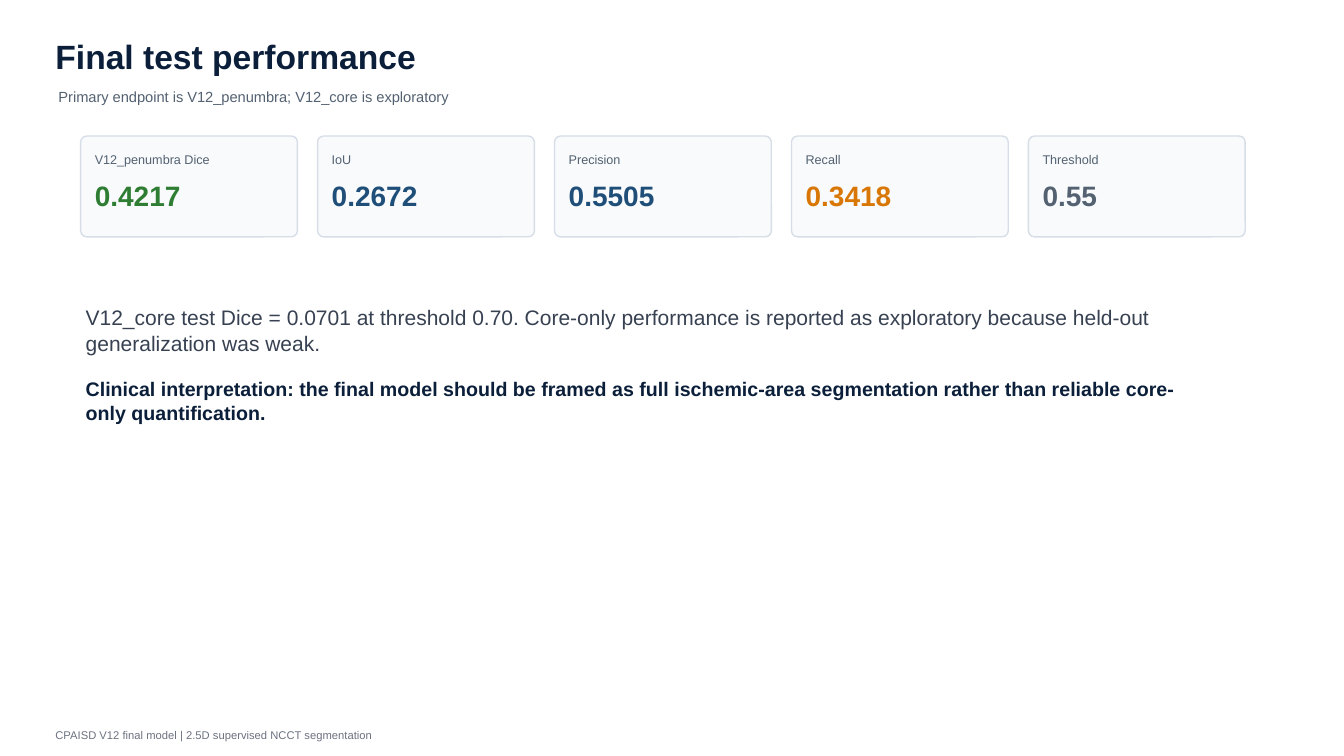
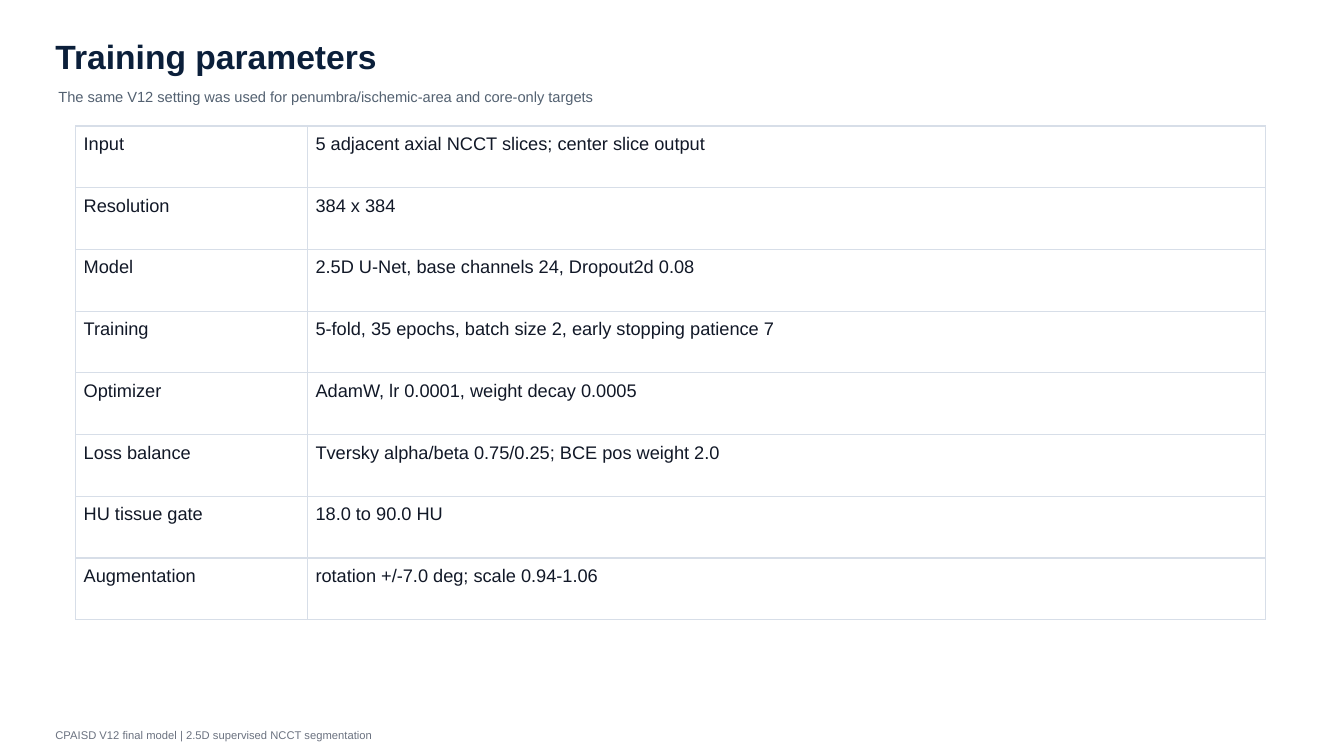
"""Build two slides: final test performance cards and a training parameter table."""
from lxml.etree import SubElement
from pptx import Presentation
from pptx.dml.color import RGBColor
from pptx.enum.shapes import MSO_SHAPE
from pptx.enum.text import MSO_ANCHOR, MSO_AUTO_SIZE, PP_ALIGN
from pptx.oxml.ns import qn
from pptx.util import Pt

PX = 9144
FONT = "Arial"
NAVY = "0B1F3A"
SLATE = "536171"
BLUE = "1F4E79"
BORDER = "D7DEE8"
FOOTER = "CPAISD V12 final model | 2.5D supervised NCCT segmentation"
hex_color = RGBColor.from_string


def add_span(frame, text, size, color, bold=False):
    """Add one formatted run to the first paragraph of a text frame."""
    para = frame.paragraphs[0]
    para.alignment = PP_ALIGN.LEFT
    span = para.add_run()
    span.text = text
    span.font.name = FONT
    span.font.size = Pt(size)
    span.font.bold = bold
    span.font.color.rgb = hex_color(color)


def place_text(box, area, text, size, color, bold=False):
    """Move a box to its area in px and write its text without margins."""
    box.left, box.top, box.width, box.height = [length * PX for length in area]
    frame = box.text_frame
    frame.margin_left = frame.margin_top = frame.margin_right = frame.margin_bottom = 0
    frame.word_wrap = True
    frame.auto_size = MSO_AUTO_SIZE.NONE
    frame.vertical_anchor = MSO_ANCHOR.MIDDLE
    add_span(frame, text, size, color, bold)


deck = Presentation()
deck.slide_width = 1333 * PX
deck.slide_height = 750 * PX

headings = [
    ("Final test performance", "Primary endpoint is V12_penumbra; V12_core is exploratory"),
    ("Training parameters",
     "The same V12 setting was used for penumbra/ischemic-area and core-only targets"),
]
pages = []
for title, subtitle in headings:
    page = deck.slides.add_slide(deck.slide_layouts[5])
    page.background.fill.solid()
    page.background.fill.fore_color.rgb = hex_color("FFFFFF")
    place_text(page.shapes.title, (55, 35, 1220, 42), title, 24, NAVY, True)
    place_text(page.shapes.add_textbox(0, 0, 0, 0), (58, 82, 1180, 28), subtitle, 10.5, SLATE)
    place_text(page.shapes.add_textbox(0, 0, 0, 0), (55, 718, 800, 22), FOOTER, 8, "6B7280")
    pages.append(page)
performance_page, parameters_page = pages

metrics = [
    ("V12_penumbra Dice", "0.4217", "2E7D32"),
    ("IoU", "0.2672", BLUE),
    ("Precision", "0.5505", BLUE),
    ("Recall", "0.3418", "D97706"),
    ("Threshold", "0.55", SLATE),
]
card_width, card_gap = 215, 20
shapes = performance_page.shapes
for index, (label, value, color) in enumerate(metrics):
    left = 80 + index * (card_width + card_gap)
    card = shapes.add_shape(MSO_SHAPE.ROUNDED_RECTANGLE,
                            left * PX, 135 * PX, card_width * PX, 100 * PX)
    card.adjustments[0] = 0.06
    card.shadow.inherit = False
    card.fill.solid()
    card.fill.fore_color.rgb = hex_color("F8FAFC")
    card.line.color.rgb = hex_color(BORDER)
    card.line.width = Pt(1)
    place_text(shapes.add_textbox(0, 0, 0, 0), (left + 14, 147, 185, 22), label, 9, SLATE)
    place_text(shapes.add_textbox(0, 0, 0, 0), (left + 14, 177, 185, 34), value, 20, color, True)

place_text(shapes.add_textbox(0, 0, 0, 0), (85, 300, 1110, 55),
           "V12_core test Dice = 0.0701 at threshold 0.70. Core-only performance is reported "
           "as exploratory because held-out generalization was weak.", 15, "374151")
place_text(shapes.add_textbox(0, 0, 0, 0), (85, 375, 1110, 45),
           "Clinical interpretation: the final model should be framed as full ischemic-area "
           "segmentation rather than reliable core-only quantification.", 14, NAVY, True)

parameters = [
    ("Input", "5 adjacent axial NCCT slices; center slice output"),
    ("Resolution", "384 x 384"),
    ("Model", "2.5D U-Net, base channels 24, Dropout2d 0.08"),
    ("Training", "5-fold, 35 epochs, batch size 2, early stopping patience 7"),
    ("Optimizer", "AdamW, lr 0.0001, weight decay 0.0005"),
    ("Loss balance", "Tversky alpha/beta 0.75/0.25; BCE pos weight 2.0"),
    ("HU tissue gate", "18.0 to 90.0 HU"),
    ("Augmentation", "rotation +/-7.0 deg; scale 0.94-1.06"),
]
table = parameters_page.shapes.add_table(
    len(parameters), 2, 75 * PX, 125 * PX, 1180 * PX, 490 * PX).table
table.first_row = False
table.horz_banding = False
for column, width in zip(table.columns, (230, 950)):
    column.width = width * PX
for row, texts in zip(table.rows, parameters):
    for cell, text in zip(row.cells, texts):
        cell.margin_left = cell.margin_top = cell.margin_right = cell.margin_bottom = 8 * PX
        cell.vertical_anchor = MSO_ANCHOR.TOP
        add_span(cell.text_frame, text, 13, "111827")
        properties = cell._tc.get_or_add_tcPr()
        for side in ("a:lnL", "a:lnR", "a:lnT", "a:lnB"):
            edge = SubElement(properties, qn(side), w=str(Pt(1)))
            SubElement(SubElement(edge, qn("a:solidFill")), qn("a:srgbClr"), val=BORDER)
        cell.fill.solid()
        cell.fill.fore_color.rgb = hex_color("FFFFFF")

deck.save("out.pptx")
